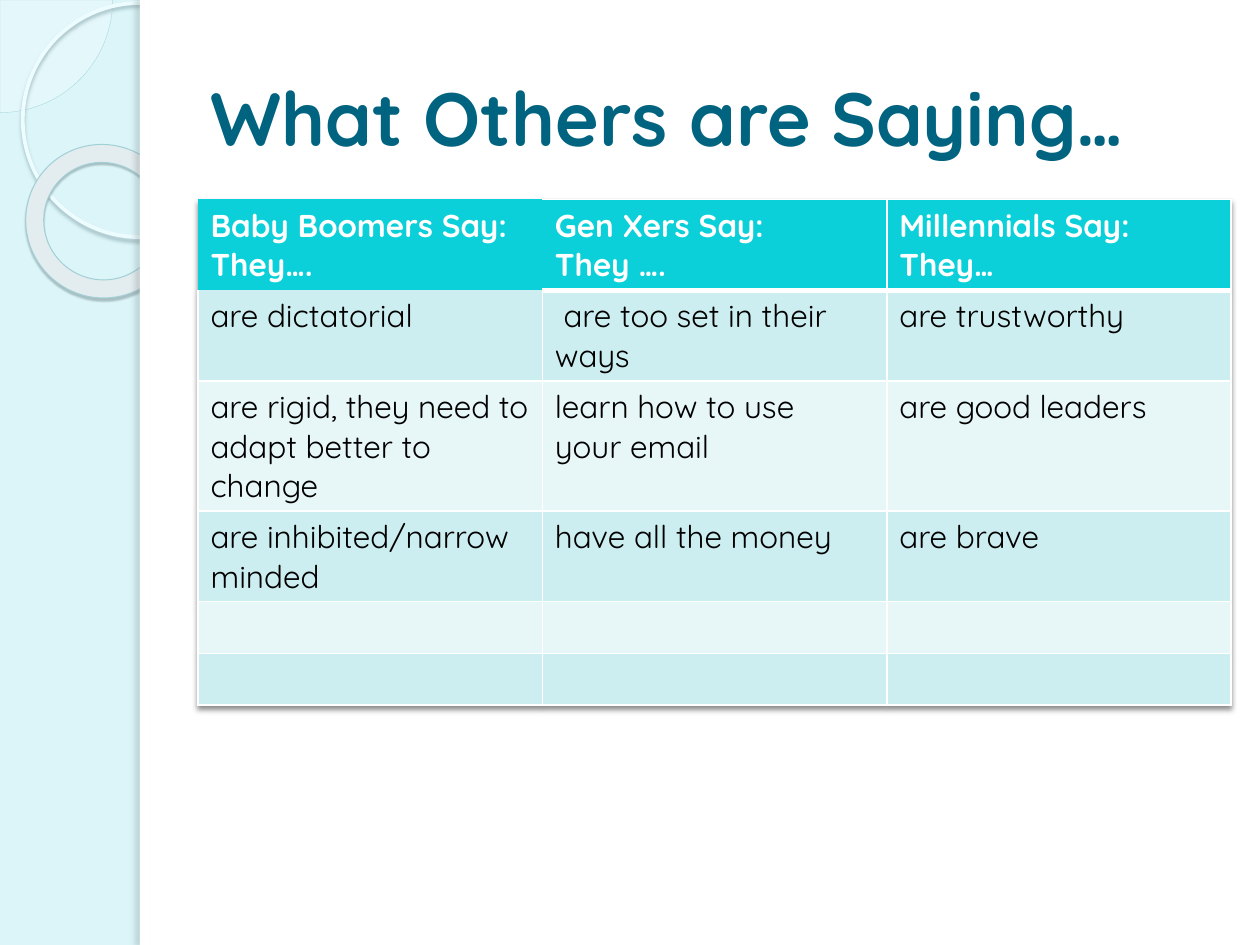
import pptx
import pptx.dml.color
import pptx.enum.shapes
import pptx.enum.text
import pptx.oxml.ns
import pptx.util
from lxml import etree

Cm = pptx.util.Cm
Pt = pptx.util.Pt
qn = pptx.oxml.ns.qn
SHAPES = pptx.enum.shapes.MSO_SHAPE
FONT = "Quicksand"
WIDTH, HEIGHT = 25.4, 19.05

ROWS = [
    ["Baby Boomers Say:\nThey….", "Gen Xers Say:\nThey ….", "Millennials Say:\nThey…"],
    ["are dictatorial", " are too set in their\nways", "are trustworthy"],
    ["are rigid, they need to adapt better to\nchange",
     "learn how to use\nyour email", "are good leaders"],
    ["are inhibited/narrow minded", "have all the money", "are brave"],
    ["", "", ""],
    ["", "", ""],
]
LINES_PER_ROW = [2, 2, 3, 2, 1, 1]


def rgb(value):
    return pptx.dml.color.RGBColor.from_string(value)


def add_color(parent, color, opacity=100):
    element = etree.SubElement(parent, qn("a:srgbClr"), val=color)
    if opacity < 100:
        etree.SubElement(element, qn("a:alpha"), val=str(opacity * 1000))


def add_shadow(effects, color, opacity, blur, distance, angle):
    shadow = etree.SubElement(
        effects, qn("a:outerShdw"), blurRad=str(Pt(blur)), dist=str(Pt(distance)),
        dir=str(angle * 60000), algn="ctr", rotWithShape="0")
    add_color(shadow, color, opacity)


def write_text(frame, text, size=18, color="000000", bold=False):
    for index, line in enumerate(text.split("\n")):
        paragraph = frame.add_paragraph() if index else frame.paragraphs[0]
        paragraph.font.size = Pt(size)
        if line:
            run = paragraph.add_run()
            run.text = line
            run.font.name = FONT
            run.font.size = Pt(size)
            run.font.bold = bold
            run.font.color.rgb = rgb(color)


def add_shape(slide, kind, box, fill=None, opacity=100, line=None, shadow=None):
    shape = slide.shapes.add_shape(kind, *(Cm(value) for value in box))
    shape.shadow.inherit = False
    properties = shape._element.spPr
    if fill:
        shape.fill.solid()
        shape.fill.fore_color.rgb = rgb(fill)
        solid = properties.find(qn("a:solidFill"))
        solid.clear()
        add_color(solid, fill, opacity)
    else:
        shape.fill.background()
    if line:
        shape.line.color.rgb = rgb(line[0])
        shape.line.width = Pt(line[1])
    else:
        shape.line.fill.background()
    if shadow:
        add_shadow(properties.find(qn("a:effectLst")), *shadow)
    return shape


def add_side_decoration(slide, left, top, width, height):
    # Quarter disc centred on the corner
    radius = 2.27
    pie = add_shape(slide, SHAPES.PIE, (left - radius, top - radius, 2 * radius, 2 * radius),
                    fill="F8FEFF", opacity=33, line=("AFDBE2", 0.25))
    pie.adjustments[0] = 0
    pie.adjustments[1] = 54
    # Thin ring and thick ring
    add_shape(slide, SHAPES.OVAL, (left + 0.46, top + 0.06, 4.72, 4.72),
              line=("EDFCFF", 2.15), shadow=("9CB9BE", 85, 2, 2, 90))
    donut = add_shape(slide, SHAPES.DONUT, (left + 0.51, top + 2.92, 3.12, 3.08),
                      fill="E3ECEE", line=("A1CFD6", 0.58),
                      shadow=("4B5E61", 35, 1, 1.2, 75))
    donut.adjustments[0] = 0.118
    donut.rotation = 38.6
    # White page that covers the rings, with a shaded edge
    edge = left + width
    add_shape(slide, SHAPES.RECTANGLE, (edge, top, WIDTH - edge, height), fill="FFFFFF")
    add_shape(slide, SHAPES.RECTANGLE, (edge, top, 0.2, height), fill="FFFFFF",
              shadow=("6C7A7C", 25, 3, 3, 180))


def add_title(slide, left, top, width, height):
    box = slide.shapes.add_textbox(Cm(left), Cm(top), Cm(width), Cm(height))
    frame = box.text_frame
    frame.word_wrap = True
    frame.vertical_anchor = pptx.enum.text.MSO_ANCHOR.MIDDLE
    write_text(frame, "What Others are Saying…", size=43, color="00637F", bold=True)


def set_borders(cell, widths):
    properties = cell._tc.get_or_add_tcPr()
    for side, width in widths.items():
        border = etree.SubElement(properties, qn("a:ln" + side), w=str(Pt(width)))
        if width:
            add_color(etree.SubElement(border, qn("a:solidFill")), "FFFFFF")
        else:
            etree.SubElement(border, qn("a:noFill"))


def add_opinion_table(slide, left, top, width):
    heights = [0.25 + 0.79 * lines for lines in LINES_PER_ROW]
    table = slide.shapes.add_table(
        len(ROWS), len(ROWS[0]), Cm(left), Cm(top), Cm(width), Cm(sum(heights))).table
    effects = etree.Element(qn("a:effectLst"))
    add_shadow(effects, "000000", 45, 3, 2, 90)
    table._tbl.tblPr.insert(0, effects)
    for row, height in zip(table.rows, heights):
        row.height = Cm(height)
    for row_index, texts in enumerate(ROWS):
        header = row_index == 0
        fill = "0BD0D9" if header else ("CCEEF1" if row_index % 2 else "E7F7F8")
        for column_index, text in enumerate(texts):
            cell = table.cell(row_index, column_index)
            plain = header and column_index == 0
            below_plain = row_index == 1 and column_index == 0
            above = 0 if plain or below_plain else 3 if row_index == 1 else 1
            below = 0 if plain else 3 if header else 1
            side = 0 if plain else 1
            left_side = 0 if header and column_index == 1 else side
            set_borders(cell, {"L": left_side, "R": side, "T": above, "B": below})
            cell.fill.solid()
            cell.fill.fore_color.rgb = rgb(fill)
            write_text(cell.text_frame, text, bold=header,
                       color="FFFFFF" if header else "000000")


def main():
    presentation = pptx.Presentation()
    presentation.slide_width = Cm(WIDTH)
    presentation.slide_height = Cm(HEIGHT)
    slide = presentation.slides.add_slide(presentation.slide_layouts[6])
    slide.background.fill.solid()
    slide.background.fill.fore_color.rgb = rgb("DBF5F9")
    add_side_decoration(slide, 0, 0, 2.82, HEIGHT)
    add_title(slide, 3.99, 0.76, 20.83, 3.18)
    add_opinion_table(slide, 3.99, 4.02, 20.83)
    presentation.save("out.pptx")


if __name__ == "__main__":
    main()
